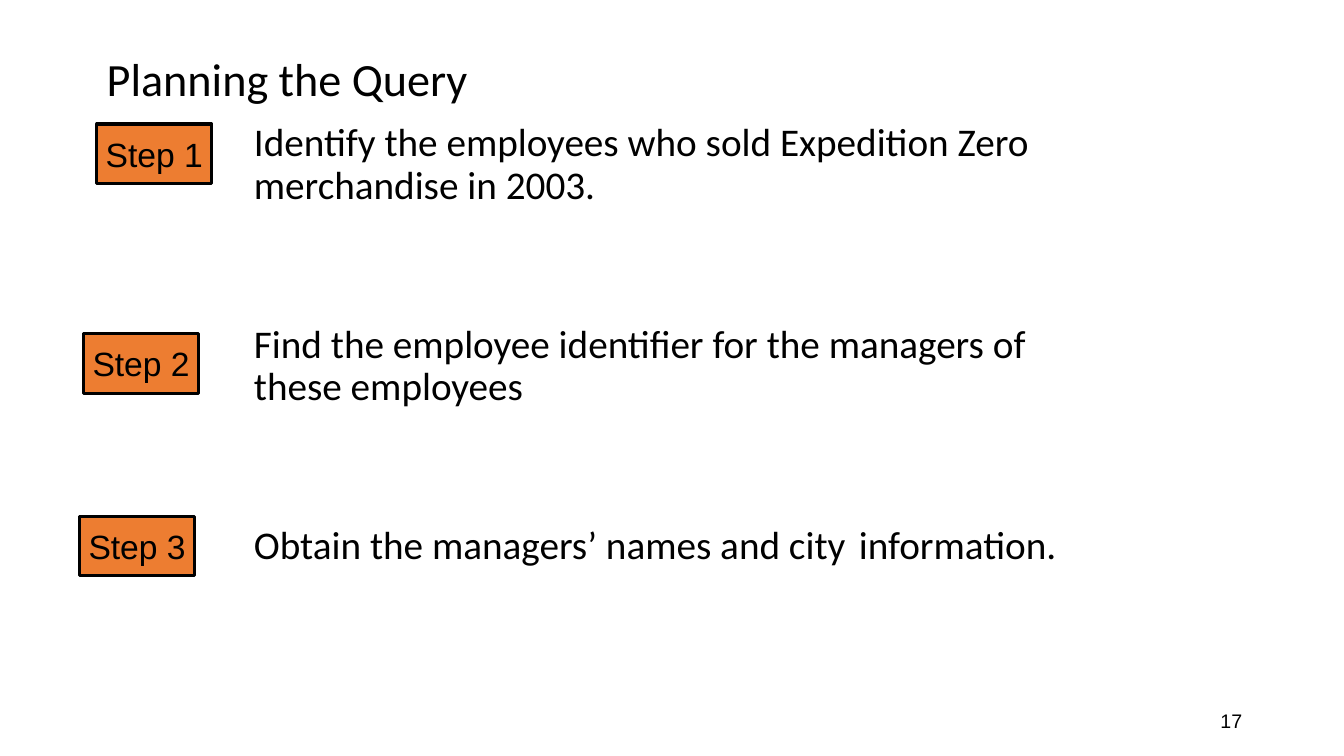
import pptx
import pptx.util
import pptx.dml.color
import pptx.enum.shapes
import pptx.enum.text

Inches, Pt = pptx.util.Inches, pptx.util.Pt
ALIGN = pptx.enum.text.PP_ALIGN
ANCHOR = pptx.enum.text.MSO_ANCHOR

BLACK = pptx.dml.color.RGBColor(0x00, 0x00, 0x00)
ORANGE = pptx.dml.color.RGBColor(0xED, 0x7D, 0x31)


class StepSlide:
    HEADING_FONT = "Calibri"
    LABEL_FONT = "Arial"

    def __init__(self, prs):
        self.slide = prs.slides.add_slide(prs.slide_layouts[6])

    def style(self, p, size, font, align=ALIGN.LEFT):
        p.font.size = Pt(size)
        p.font.name = font
        p.font.color.rgb = BLACK
        p.alignment = align

    def text(self, box, lines, size, font, align=ALIGN.LEFT,
             anchor=ANCHOR.MIDDLE, spacing=1.0, gap=0):
        tf = self.slide.shapes.add_textbox(*map(Inches, box)).text_frame
        tf.word_wrap = True
        tf.vertical_anchor = anchor
        for i, line in enumerate(lines):
            p = tf.add_paragraph() if i else tf.paragraphs[0]
            p.text = line
            p.line_spacing = spacing
            p.space_before = Pt(gap if i else 0)
            self.style(p, size, font, align)

    def step(self, left, top, label):
        sp = self.slide.shapes.add_shape(
            pptx.enum.shapes.MSO_SHAPE.RECTANGLE,
            Inches(left), Inches(top), Inches(1.14), Inches(0.59))
        sp.shadow.inherit = False
        sp.fill.solid()
        sp.fill.fore_color.rgb = ORANGE
        sp.line.color.rgb = BLACK
        sp.line.width = Pt(2.25)
        tf = sp.text_frame
        tf.word_wrap = False
        tf.vertical_anchor = ANCHOR.MIDDLE
        tf.margin_left = tf.margin_right = Inches(0.1)
        tf.margin_top = tf.margin_bottom = Inches(0.1)
        p = tf.paragraphs[0]
        p.text = label
        self.style(p, 24, self.LABEL_FONT, ALIGN.CENTER)


def main():
    prs = pptx.Presentation()
    prs.slide_width, prs.slide_height = Inches(13.33), Inches(7.5)
    s = StepSlide(prs)

    # Title
    s.text((0.96, 0.08, 11.5, 1.45), ["Planning the Query"],
           33, s.HEADING_FONT, spacing=0.9)

    # Step descriptions
    s.text((2.42, 1.17, 8.58, 5.5), [
        "Identify the employees who sold Expedition Zero merchandise in 2003.",
        "Find the employee identifier for the managers of these employees",
        "Obtain the managers’ names and city \tinformation.",
    ], 28, s.HEADING_FONT, anchor=ANCHOR.TOP, spacing=0.9, gap=83.5)

    # Step labels
    for number, (left, top) in enumerate(
            [(0.96, 1.23), (0.83, 3.31), (0.79, 5.12)], start=1):
        s.step(left, top, f"Step {number}")

    # Slide number
    s.text((9.42, 6.95, 3, 0.4), ["17"], 14, s.LABEL_FONT, ALIGN.RIGHT)

    prs.save("out.pptx")


if __name__ == "__main__":
    main()
